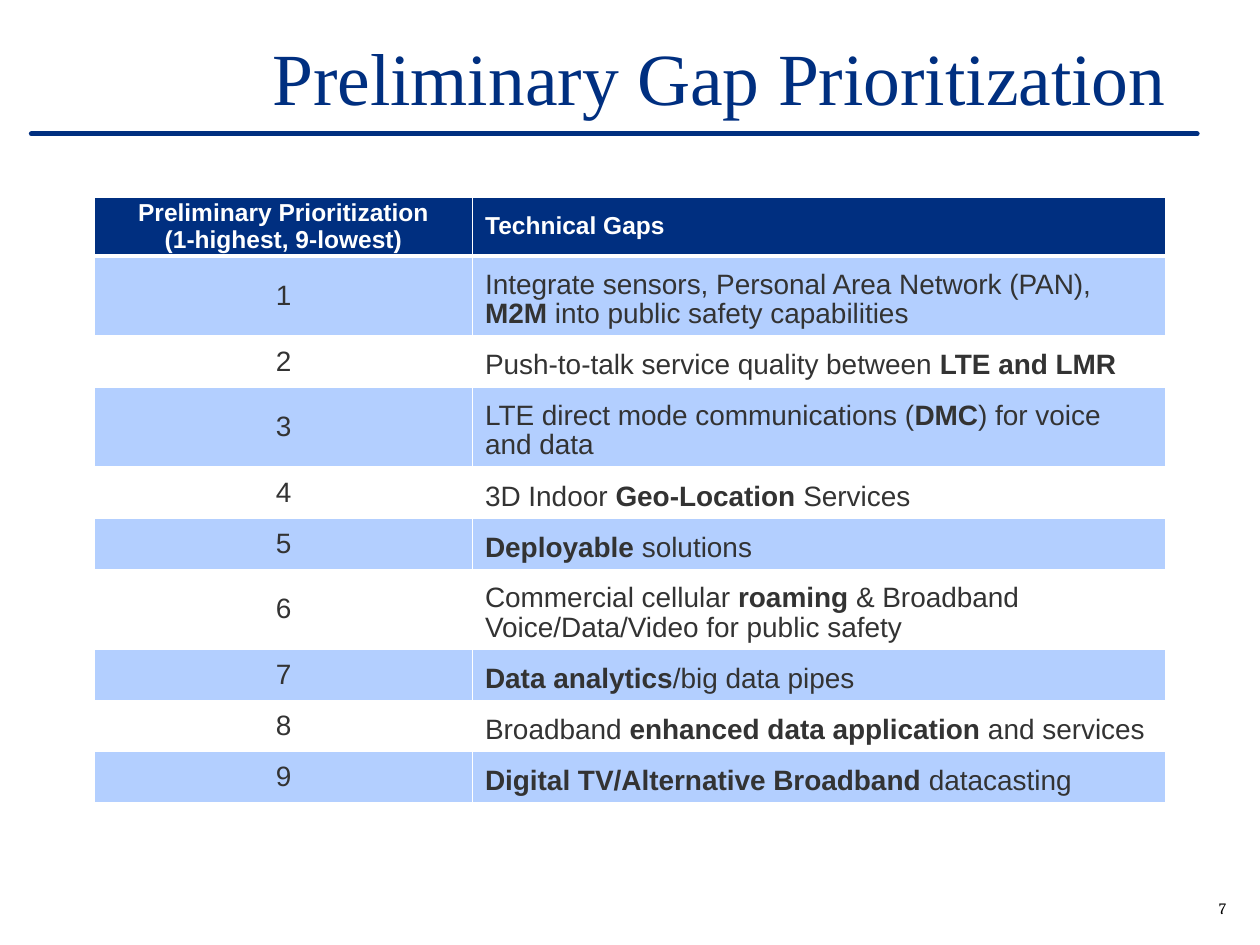
from dataclasses import dataclass
from typing import NamedTuple

from lxml import etree
from pptx import Presentation
from pptx.dml.color import RGBColor
from pptx.enum.shapes import MSO_CONNECTOR
from pptx.enum.text import MSO_ANCHOR, MSO_AUTO_SIZE, PP_ALIGN
from pptx.oxml.ns import qn
from pptx.util import Pt

LEFT, CENTER, RIGHT = PP_ALIGN.LEFT, PP_ALIGN.CENTER, PP_ALIGN.RIGHT
MIDDLE, BOTTOM = MSO_ANCHOR.MIDDLE, MSO_ANCHOR.BOTTOM
NO_AUTOFIT = MSO_AUTO_SIZE.NONE
STRAIGHT = MSO_CONNECTOR.STRAIGHT
TITLE_ONLY_LAYOUT = 5


@dataclass(frozen=True)
class Theme:
    navy: str = "002F80"
    band: str = "B3CFFF"
    white: str = "FFFFFF"
    body: str = "333333"
    black: str = "000000"
    title_size: float = 42
    header_size: float = 14
    body_size: float = 16
    number_size: float = 9
    line_spacing: float = 0.96


class Style(NamedTuple):
    font: str
    size: float
    color: str


class Run(NamedTuple):
    text: str
    bold: bool = False


class Gap(NamedTuple):
    runs: tuple[Run, ...]
    lines: int = 1


THEME = Theme()
TITLE = Style("Times New Roman", THEME.title_size, THEME.navy)
HEADER = Style("Arial", THEME.header_size, THEME.white)
BODY = Style("Arial", THEME.body_size, THEME.body)
NUMBER = Style("Cambria", THEME.number_size, THEME.black)

HEADER_HEIGHT = 33.8
ROW_HEIGHTS = {1: 29.2, 2: 45.7}
COLUMN_WIDTHS = (216, 396)

GAPS = (
    Gap((Run("Integrate sensors, Personal Area Network (PAN), "), Run("M2M", True),
         Run(" into public safety capabilities")), 2),
    Gap((Run("Push-to-talk service quality between "), Run("LTE and LMR", True))),
    Gap((Run("LTE direct mode communications ("), Run("DMC", True),
         Run(") for voice and data")), 2),
    Gap((Run("3D Indoor "), Run("Geo-Location ", True), Run("Services"))),
    Gap((Run("Deployable ", True), Run("solutions"))),
    Gap((Run("Commercial cellular "), Run("roaming ", True),
         Run("& Broadband Voice/Data/Video for public safety")), 2),
    Gap((Run("Data analytics", True), Run("/big data pipes"))),
    Gap((Run("Broadband "), Run("enhanced data application", True), Run(" and services"))),
    Gap((Run("Digital TV/Alternative Broadband ", True), Run("datacasting"))),
)


def write(text_frame, paragraphs, style: Style, alignment, spacing: float = 1.0) -> None:
    """Fill a text frame with paragraphs, each a sequence of runs."""
    for index, runs in enumerate(paragraphs):
        paragraph = text_frame.add_paragraph() if index else text_frame.paragraphs[0]
        paragraph.alignment = alignment
        paragraph.line_spacing = spacing
        for text, bold in runs:
            run = paragraph.add_run()
            run.text = text
            run.font.name = style.font
            run.font.size = Pt(style.size)
            run.font.bold = bold
            run.font.color.rgb = RGBColor.from_string(style.color)


def set_borders(cell, top: float, bottom: float) -> None:
    properties = cell._tc.get_or_add_tcPr()
    widths = {"a:lnL": 1, "a:lnR": 1, "a:lnT": top, "a:lnB": bottom}
    for index, (tag, width) in enumerate(widths.items()):
        line = etree.Element(qn(tag), w=str(Pt(width)))
        fill = etree.SubElement(line, qn("a:solidFill"))
        etree.SubElement(fill, qn("a:srgbClr"), val=THEME.white)
        properties.insert(index, line)


def fill_row(table, row: int, fill: str, style: Style, rank, gap, gap_anchor) -> None:
    contents = ((rank, CENTER, MIDDLE), (gap, LEFT, gap_anchor))
    for column, (paragraphs, alignment, anchor) in enumerate(contents):
        cell = table.cell(row, column)
        cell.fill.solid()
        cell.fill.fore_color.rgb = RGBColor.from_string(fill)
        cell.vertical_anchor = anchor
        if column == 0:
            cell.margin_left = cell.margin_right = cell.margin_top = Pt(0.72)
            cell.margin_bottom = Pt(0)
        write(cell.text_frame, paragraphs, style, alignment, THEME.line_spacing)
        set_borders(cell, top=3 if row == 1 else 1, bottom=3 if row == 0 else 1)


def add_gap_table(slide) -> None:
    heights = [HEADER_HEIGHT, *(ROW_HEIGHTS[gap.lines] for gap in GAPS)]
    table = slide.shapes.add_table(
        len(heights), len(COLUMN_WIDTHS), Pt(54), Pt(112.6),
        Pt(sum(COLUMN_WIDTHS)), Pt(sum(heights))).table
    table.horz_banding = False
    for column, width in zip(table.columns, COLUMN_WIDTHS):
        column.width = Pt(width)
    for row, height in zip(table.rows, heights):
        row.height = Pt(height)

    rank_heading = [[Run("Preliminary Prioritization", True)],
                    [Run("(1-highest, 9-lowest)", True)]]
    fill_row(table, 0, THEME.navy, HEADER, rank_heading,
             [[Run("Technical Gaps", True)]], MIDDLE)
    for rank, gap in enumerate(GAPS, start=1):
        fill = THEME.band if rank % 2 else THEME.white
        fill_row(table, rank, fill, BODY, [[Run(str(rank))]], [gap.runs], BOTTOM)


def add_title_rule(slide) -> None:
    rule = slide.shapes.add_connector(STRAIGHT, Pt(18), Pt(76.5), Pt(684), Pt(76.5))
    rule.line.color.rgb = RGBColor.from_string(THEME.navy)
    rule.line.width = Pt(3)
    rule.line._get_or_add_ln().set("cap", "rnd")
    etree.SubElement(rule._element.spPr, qn("a:effectLst"))


def add_slide_number(slide) -> None:
    box = slide.shapes.add_textbox(Pt(666), Pt(509.8), Pt(41.8), Pt(18))
    box.text_frame.word_wrap = True
    box.text_frame.vertical_anchor = BOTTOM
    write(box.text_frame, [[Run("7")]], NUMBER, RIGHT)


def set_title(slide) -> None:
    title = slide.shapes.title
    title.left, title.top, title.width, title.height = Pt(148.3), Pt(21.6), Pt(534.2), Pt(44)
    title.text_frame.auto_size = NO_AUTOFIT
    title.text_frame.vertical_anchor = MIDDLE
    write(title.text_frame, [[Run("Preliminary Gap Prioritization")]], TITLE, LEFT)


def main() -> None:
    presentation = Presentation()
    presentation.slide_width, presentation.slide_height = Pt(720), Pt(540)
    slide = presentation.slides.add_slide(presentation.slide_layouts[TITLE_ONLY_LAYOUT])
    add_slide_number(slide)
    add_title_rule(slide)
    set_title(slide)
    add_gap_table(slide)
    presentation.save("out.pptx")


if __name__ == "__main__":
    main()
